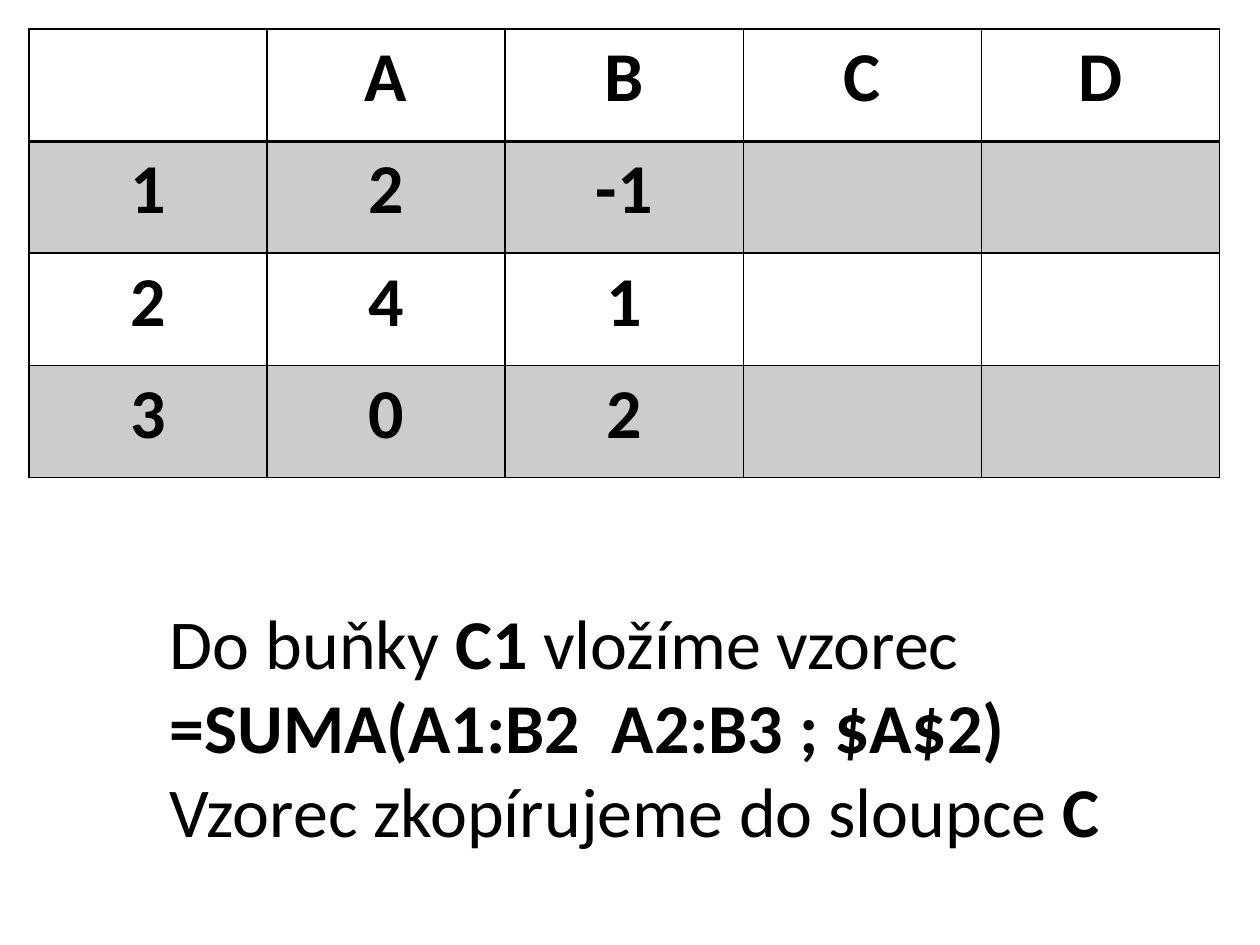
from typing import NamedTuple

from lxml import etree
from pptx import Presentation
from pptx.dml.color import RGBColor
from pptx.enum.text import PP_ALIGN
from pptx.oxml.ns import qn
from pptx.util import Inches, Pt

CENTER = PP_ALIGN.CENTER
BLACK = "000000"
ROWS = [
    ["", "A", "B", "C", "D"],
    ["1", "2", "-1", "", ""],
    ["2", "4", "1", "", ""],
    ["3", "0", "2", "", ""],
]


class Part(NamedTuple):
    """A piece of text with its weight."""
    text: str
    bold: bool = False


NOTE = [
    [Part("Do buňky "), Part("C1 ", True), Part("vložíme vzorec "),
     Part("=SUMA(A1:B2  A2:B3 ; $A$2)", True)],
    [Part("Vzorec zkopírujeme do sloupce "), Part("C", True)],
]


def paint(target, color: str) -> None:
    """Give a solid fill or a font its colour."""
    target.rgb = RGBColor.from_string(color)


def write(para, part: Part) -> None:
    """Add one run to a paragraph."""
    run = para.add_run()
    run.text = part.text
    font = run.font
    font.name = "Calibri"
    font.size = Pt(40)
    font.bold = part.bold
    paint(font.color, BLACK)


def edge(cell, side: str, width: float) -> None:
    """Draw one border of a cell."""
    props = cell._tc.get_or_add_tcPr()
    line = etree.SubElement(props, qn(f"a:ln{side}"), w=str(Pt(width)))
    fill = etree.SubElement(line, qn("a:solidFill"))
    etree.SubElement(fill, qn("a:srgbClr"), val=BLACK)


def shade(cell, alpha: int) -> None:
    """Fill a cell with black at a percentage of opacity."""
    cell.fill.solid()
    paint(cell.fill.fore_color, BLACK)
    fill = cell._tc.tcPr.find(qn("a:solidFill"))
    tone = fill.find(qn("a:srgbClr"))
    etree.SubElement(tone, qn("a:alpha"), val=str(alpha * 1000))


def grid(slide) -> None:
    """Draw the sheet of cells."""
    table = slide.shapes.add_table(
        len(ROWS), len(ROWS[0]), Inches(0.23), Inches(0.23),
        Inches(9.45), Inches(3.56)).table
    for row, texts in enumerate(ROWS):
        for col, text in enumerate(texts):
            cell = table.cell(row, col)
            para = cell.text_frame.paragraphs[0]
            para.alignment = CENTER
            if text:
                write(para, Part(text, True))
            for side in "LRTB":
                thick = (row, side) in ((0, "B"), (1, "T"))
                edge(cell, side, 2 if thick else 1)
            if row % 2:
                shade(cell, 20)
            else:
                cell.fill.background()


def note(slide) -> None:
    """Write the task below the sheet."""
    box = slide.shapes.add_textbox(
        Inches(1.25), Inches(4.71), Inches(7.89), Inches(2.79))
    frame = box.text_frame
    frame.word_wrap = True
    for index, parts in enumerate(NOTE):
        para = frame.add_paragraph() if index else frame.paragraphs[0]
        for part in parts:
            write(para, part)


def main() -> None:
    """Build and save the slide."""
    deck = Presentation()
    deck.slide_width = Inches(10)
    deck.slide_height = Inches(7.5)
    slide = deck.slides.add_slide(deck.slide_layouts[6])
    grid(slide)
    note(slide)
    deck.save("out.pptx")


if __name__ == "__main__":
    main()
